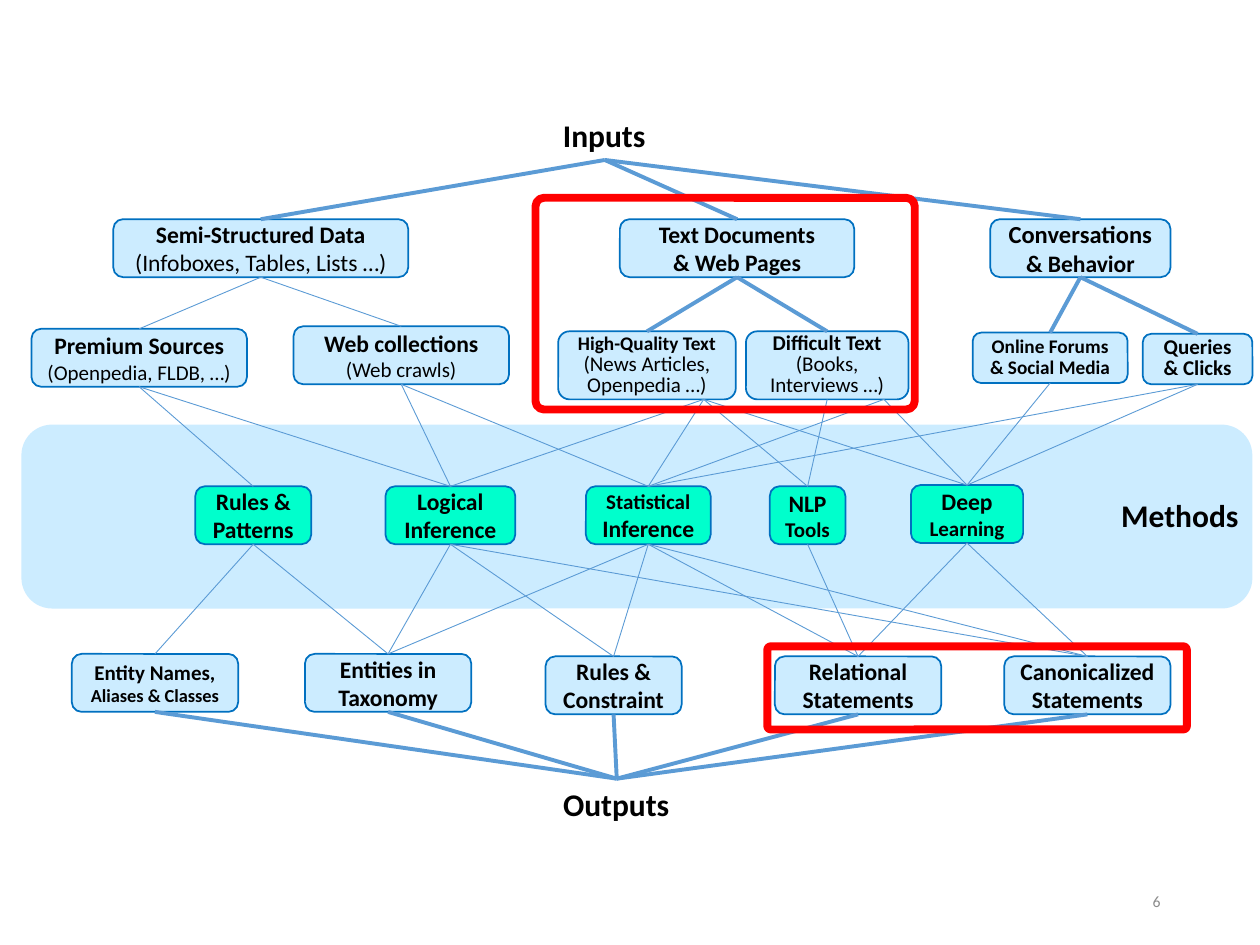
from dataclasses import dataclass

from lxml import etree
from pptx import Presentation
from pptx.dml.color import RGBColor
from pptx.enum.shapes import MSO_CONNECTOR, MSO_SHAPE
from pptx.enum.text import MSO_ANCHOR, PP_ALIGN
from pptx.oxml.ns import qn
from pptx.util import Inches, Pt

ROUND_RECT = MSO_SHAPE.ROUNDED_RECTANGLE
STRAIGHT = MSO_CONNECTOR.STRAIGHT
MIDDLE = MSO_ANCHOR.MIDDLE
LEFT, CENTER, RIGHT = PP_ALIGN.LEFT, PP_ALIGN.CENTER, PP_ALIGN.RIGHT
TOP_SITE, BOTTOM_SITE = 0, 2


@dataclass(frozen=True)
class Theme:
    font: str = "Calibri"
    ink: RGBColor = RGBColor(0x00, 0x00, 0x00)
    muted: RGBColor = RGBColor(0x8C, 0x8C, 0x8C)
    pale: RGBColor = RGBColor(0xCC, 0xEC, 0xFF)
    mint: RGBColor = RGBColor(0x00, 0xFF, 0xCC)
    outline: RGBColor = RGBColor(0x00, 0x70, 0xC0)
    link: RGBColor = RGBColor(0x5B, 0x9B, 0xD5)
    accent: RGBColor = RGBColor(0xFF, 0x00, 0x00)
    heading: float = 18
    large: float = 14
    body: float = 13.5
    detail: float = 12
    small: float = 11
    tiny: float = 10.5
    number: float = 9
    thin: float = 0.5
    border: float = 1
    thick: float = 2.25
    frame: float = 4.5


T = Theme()


class Diagram:
    """Draws styled elements on one slide and keeps the nodes by key."""

    def __init__(self, s, theme):
        self.s, self.theme, self.nodes = s, theme, {}

    def add_line(self, tf, text, size, bold, color, align, first):
        p = tf.paragraphs[0] if first else tf.add_paragraph()
        p.alignment = align
        r = p.add_run()
        r.text = text
        r.font.name, r.font.size, r.font.bold = self.theme.font, Pt(size), bold
        r.font.color.rgb = color
        return p

    def label(self, key, text, at, size, bold=True, color=None, align=LEFT):
        sp = self.s.shapes.add_textbox(*map(Inches, at))
        sp.text_frame.vertical_anchor = MIDDLE
        self.add_line(sp.text_frame, text, size, bold,
                      color or self.theme.ink, align, True)
        self.nodes[key] = sp

    def panel(self, at, fill=None, line=None, width=0, radius=None):
        sp = self.s.shapes.add_shape(ROUND_RECT, *map(Inches, at))
        sp.shadow.inherit = False
        if fill is None:
            sp.fill.background()
        else:
            sp.fill.solid()
            sp.fill.fore_color.rgb = fill
        if line is None:
            sp.line.fill.background()
        else:
            sp.line.color.rgb = line
            sp.line.width = Pt(width)
        if radius is not None:
            sp.adjustments[0] = radius
        return sp

    def box(self, key, at, lines, fill, spacing=None):
        """Adds a node; each line is (text, size) or (text, size, bold)."""
        sp = self.panel(at, fill, self.theme.outline, self.theme.border)
        tf = sp.text_frame
        tf.word_wrap, tf.vertical_anchor = True, MIDDLE
        tf.margin_left = tf.margin_right = tf.margin_top = tf.margin_bottom = 0
        for i, (text, size, *bold) in enumerate(lines):
            p = self.add_line(tf, text, size, bold[0] if bold else True,
                              self.theme.ink, CENTER, i == 0)
            if spacing:
                p.line_spacing = Pt(spacing)
        self.nodes[key] = sp

    def link(self, upper, lower, width, shift=0):
        """Joins bottom to top; shift moves the start sideways off centre."""
        a, b = self.nodes[upper], self.nodes[lower]
        x, y = a.left + a.width // 2 + Inches(shift), a.top + a.height
        cx = self.s.shapes.add_connector(
            STRAIGHT, x, y, b.left + b.width // 2, b.top)
        if not shift:
            cx.begin_connect(a, BOTTOM_SITE)
        cx.end_connect(b, TOP_SITE)
        cx.line.color.rgb = self.theme.link
        cx.line.width = Pt(width)
        etree.SubElement(cx._element.spPr, qn("a:effectLst"))


H = 0.46
TIGHT = 12  # exact line pitch, in points, of the compact boxes

INPUT_BOXES = [
    ("semi", (0.9, 1.74, 2.34, H), [("Semi-Structured Data", T.body),
                                    ("(Infoboxes, Tables, Lists …)", T.body, False)]),
    ("text", (4.92, 1.74, 1.86, H), [("Text Documents", T.body), ("& Web Pages", T.body)]),
    ("talk", (7.86, 1.74, 1.43, H), [("Conversations", T.large), ("& Behavior", T.body)]),
    ("premium", (0.25, 2.61, 1.71, H), [("Premium Sources", T.body),
                                        ("(Openpedia, FLDB, …)", T.detail, False)]),
    ("web", (2.33, 2.59, 1.71, H), [("Web collections", T.body),
                                    ("(Web crawls)", T.detail, False)]),
]
COMPACT_BOXES = [
    ("quality", (4.43, 2.63, 1.41, 0.54), [("High-Quality Text", T.small),
                                           ("(News Articles,", T.detail, False),
                                           ("Openpedia …)", T.detail, False)]),
    ("difficult", (5.92, 2.63, 1.29, 0.54), [("Difficult Text", T.detail),
                                             ("(Books,", T.detail, False),
                                             ("Interviews …)", T.detail, False)]),
    ("forums", (7.72, 2.64, 1.23, 0.4), [("Online Forums", T.small),
                                         ("& Social Media", T.small)]),
    ("queries", (9.07, 2.65, 0.87, 0.4), [("Queries", T.detail), ("& Clicks", T.detail)]),
]
METHOD_BOXES = [
    ("rules", (1.55, 3.86, 0.92, H), [("Rules &", T.body), ("Patterns", T.body)]),
    ("logic", (3.06, 3.86, 1.03, H), [("Logical", T.body), ("Inference", T.body)]),
    ("stats", (4.65, 3.86, 0.99, H), [("Statistical", T.detail), ("Inference", T.body)]),
    ("nlp", (6.11, 3.86, 0.6, H), [("NLP", T.body), ("Tools", T.detail)]),
    ("deep", (7.23, 3.85, 0.89, H), [("Deep", T.body), ("Learning", T.detail)]),
]
OUTPUT_BOXES = [
    ("names", (0.57, 5.19, 1.32, H), [("Entity Names,", T.detail),
                                      ("Aliases & Classes", T.tiny)]),
    ("taxonomy", (2.42, 5.19, 1.32, H), [("Entities in", T.body), ("Taxonomy", T.body)]),
    ("constraint", (4.33, 5.21, 1.08, H), [("Rules &", T.body), ("Constraint", T.body)]),
    ("relational", (6.15, 5.21, 1.32, H), [("Relational", T.body), ("Statements", T.body)]),
    ("canonical", (7.97, 5.21, 1.32, H), [("Canonicalized", T.body), ("Statements", T.body)]),
]
BOX_GROUPS = [(INPUT_BOXES, T.pale, None), (COMPACT_BOXES, T.pale, TIGHT),
              (METHOD_BOXES, T.mint, None), (OUTPUT_BOXES, T.pale, None)]

THICK_LINKS = {
    "inputs": ["semi", "text", "talk"],
    "text": ["quality", "difficult"],
    "talk": ["forums", "queries"],
    **{key: ["outputs"] for key, *_ in OUTPUT_BOXES},
}
THIN_LINKS = {
    "semi": ["premium", "web"],
    "premium": ["rules", "logic"],
    "web": ["logic", "stats"],
    "difficult": ["nlp"],
    "forums": ["deep"],
    "queries": ["deep", "stats"],
    "rules": ["names", "taxonomy"],
    "logic": ["taxonomy", "constraint", "canonical"],
    "stats": ["taxonomy", "constraint", "relational", "canonical"],
    "nlp": ["relational"],
    "deep": ["relational", "canonical"],
}
SHIFTED_LINKS = {"quality": ["logic", "stats", "nlp", "deep"],
                 "difficult": ["stats", "deep"]}
LINK_GROUPS = [(THICK_LINKS, T.thick, 0), (THIN_LINKS, T.thin, 0),
               (SHIFTED_LINKS, T.thin, 0.45)]


def main():
    prs = Presentation()
    prs.slide_width, prs.slide_height = Inches(10), Inches(7.5)
    d = Diagram(prs.slides.add_slide(prs.slide_layouts[6]), T)

    d.panel((0.17, 3.37, 9.77, 1.46), T.pale)
    d.label("inputs", "Inputs", (4.37, 0.87, 0.86, 0.4), T.heading)
    d.label("methods", "Methods", (8.8, 3.89, 1.14, 0.4), T.heading)
    d.label("outputs", "Outputs", (4.37, 6.18, 1.05, 0.4), T.heading)
    for boxes, fill, spacing in BOX_GROUPS:
        for key, at, lines in boxes:
            d.box(key, at, lines, fill, spacing)
    for links, width, shift in LINK_GROUPS:
        for upper, targets in links.items():
            for lower in targets:
                d.link(upper, lower, width, shift)
    d.label("number", "6", (7.06, 6.95, 2.25, 0.4), T.number, False, T.muted, RIGHT)
    for at in [(4.25, 1.57, 3.01, 1.68), (6.09, 5.13, 3.33, 0.66)]:
        d.panel(at, line=T.accent, width=T.frame, radius=0.04)

    prs.save("out.pptx")


if __name__ == "__main__":
    main()
